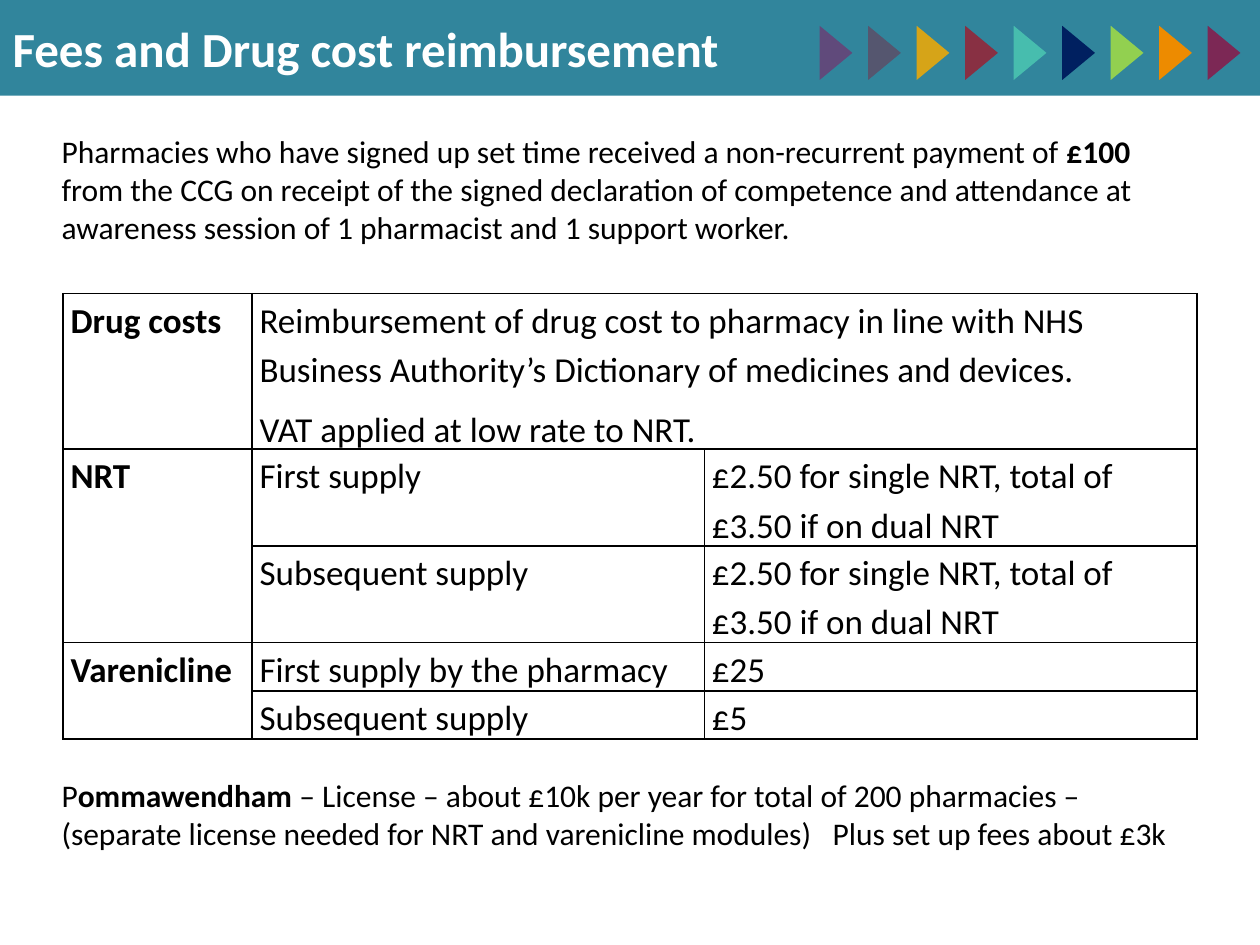
from lxml import etree
from pptx import Presentation
from pptx import util as u
from pptx.dml.color import RGBColor
from pptx.enum import shapes, text
from pptx.oxml import ns

TEAL = RGBColor(0x31, 0x85, 0x9C)
WHITE = RGBColor(0xFF, 0xFF, 0xFF)
BLACK = RGBColor(0, 0, 0)
ARROWS = [RGBColor.from_string(c) for c in (
    "604A7B", "55566F", "D6A418", "883043", "47BDAE",
    "002060", "92D050", "ED8B00", "7C2855")]


def add_run(p, words, size, bold=False, color=BLACK):
    r = p.add_run()
    r.text = words
    r.font.name = "Calibri"
    r.font.size = u.Pt(size)
    r.font.bold = bold
    r.font.color.rgb = color


def add_note(s, left, top, width, height, runs):
    tf = s.shapes.add_textbox(left, top, width, height).text_frame
    tf.word_wrap = True
    p = tf.paragraphs[0]
    for words, bold in runs:
        add_run(p, words, 18, bold)
    return p


prs = Presentation()
prs.slide_width, prs.slide_height = u.Inches(10), u.Inches(7.5)
W, H = prs.slide_width, prs.slide_height
s = prs.slides.add_slide(prs.slide_layouts[5])

title = s.shapes.title
title.left, title.top, title.width, title.height = 0, 0, W, u.Inches(0.76)
title.fill.solid()
title.fill.fore_color.rgb = TEAL
tf = title.text_frame
tf.auto_size = text.MSO_AUTO_SIZE.NONE
tf.vertical_anchor = text.MSO_ANCHOR.MIDDLE
p = tf.paragraphs[0]
p.alignment = text.PP_ALIGN.LEFT
add_run(p, "Fees and Drug cost reimbursement", 28, True, WHITE)

arrows = s.shapes.add_group_shape()
pitch = 0.0385 * W
for i, color in enumerate(ARROWS):
    sp = arrows.shapes.add_shape(
        shapes.MSO_SHAPE.ISOSCELES_TRIANGLE,
        int(0.642 * W + i * pitch), u.Inches(0.29), u.Inches(0.43), u.Inches(0.26))
    sp.rotation = 90
    sp.shadow.inherit = False
    sp.fill.solid()
    sp.fill.fore_color.rgb = color
    sp.line.fill.background()

margin = int(0.039 * W)
add_note(s, margin, u.Inches(1), W - 2 * margin, u.Inches(1.01), [
    ("Pharmacies who have signed up set time received a non-recurrent payment of ", False),
    ("£100 ", True),
    ("from the CCG on receipt of the signed declaration of competence and "
     "attendance at awareness session of 1 pharmacist and 1 support worker.", False)])

nrt_fee = "£2.50 for single NRT, total of £3.50 if on dual NRT"
rows = [
    ("Drug costs", "Reimbursement of drug cost to pharmacy in line with NHS Business "
     "Authority’s Dictionary of medicines and devices.\nVAT applied at low rate to NRT.", ""),
    ("NRT", "First supply", nrt_fee),
    ("", "Subsequent supply", nrt_fee),
    ("Varenicline", "First supply by the pharmacy", "£25"),
    ("", "Subsequent supply", "£5")]
tbl = s.shapes.add_table(5, 3, int(0.05 * W), u.Inches(2.33),
                         int(0.9 * W), u.Inches(3.41)).table
tbl.first_row = tbl.horz_banding = False
for col, share in zip(tbl.columns, (0.15, 0.359, 0.391)):
    col.width = int(share * W)
for row, height in zip(tbl.rows, (1.21, 0.74, 0.74, 0.36, 0.36)):
    row.height = u.Inches(height)

for y, row in enumerate(rows):
    for x, words in enumerate(row):
        cell = tbl.cell(y, x)
        cell.margin_left = cell.margin_right = u.Inches(0.06)
        cell.margin_top = cell.margin_bottom = 0
        pr = cell._tc.get_or_add_tcPr()
        for side in ("lnL", "lnR", "lnT", "lnB"):
            ln = etree.SubElement(pr, ns.qn("a:" + side), w=str(u.Pt(1)))
            fill = etree.SubElement(ln, ns.qn("a:solidFill"))
            etree.SubElement(fill, ns.qn("a:srgbClr"), val=str(BLACK))
        cell.fill.solid()
        cell.fill.fore_color.rgb = WHITE
        if not words:
            continue
        tf = cell.text_frame
        for i, line in enumerate(words.split("\n")):
            p = tf.add_paragraph() if i else tf.paragraphs[0]
            p.line_spacing = 1.15
            p.space_after = u.Pt(6)
            add_run(p, line, 20, x == 0)

for first, last in (((0, 1), (0, 2)), ((1, 0), (2, 0)), ((3, 0), (4, 0))):
    tbl.cell(*first).merge(tbl.cell(*last))

p = add_note(s, margin, u.Inches(6.11), int(0.9 * W), u.Inches(0.71), [
    ("P", False),
    ("ommawendham ", True),
    ("– License – about £10k per year for total of 200 pharmacies – (separate license "
     "needed for NRT and varenicline modules)\tPlus set up fees about £3k", False)])
tabs = etree.SubElement(p._p.get_or_add_pPr(), ns.qn("a:tabLst"))
etree.SubElement(tabs, ns.qn("a:tab"), pos=str(u.Inches(6.12)), algn="l")

prs.save("out.pptx")
